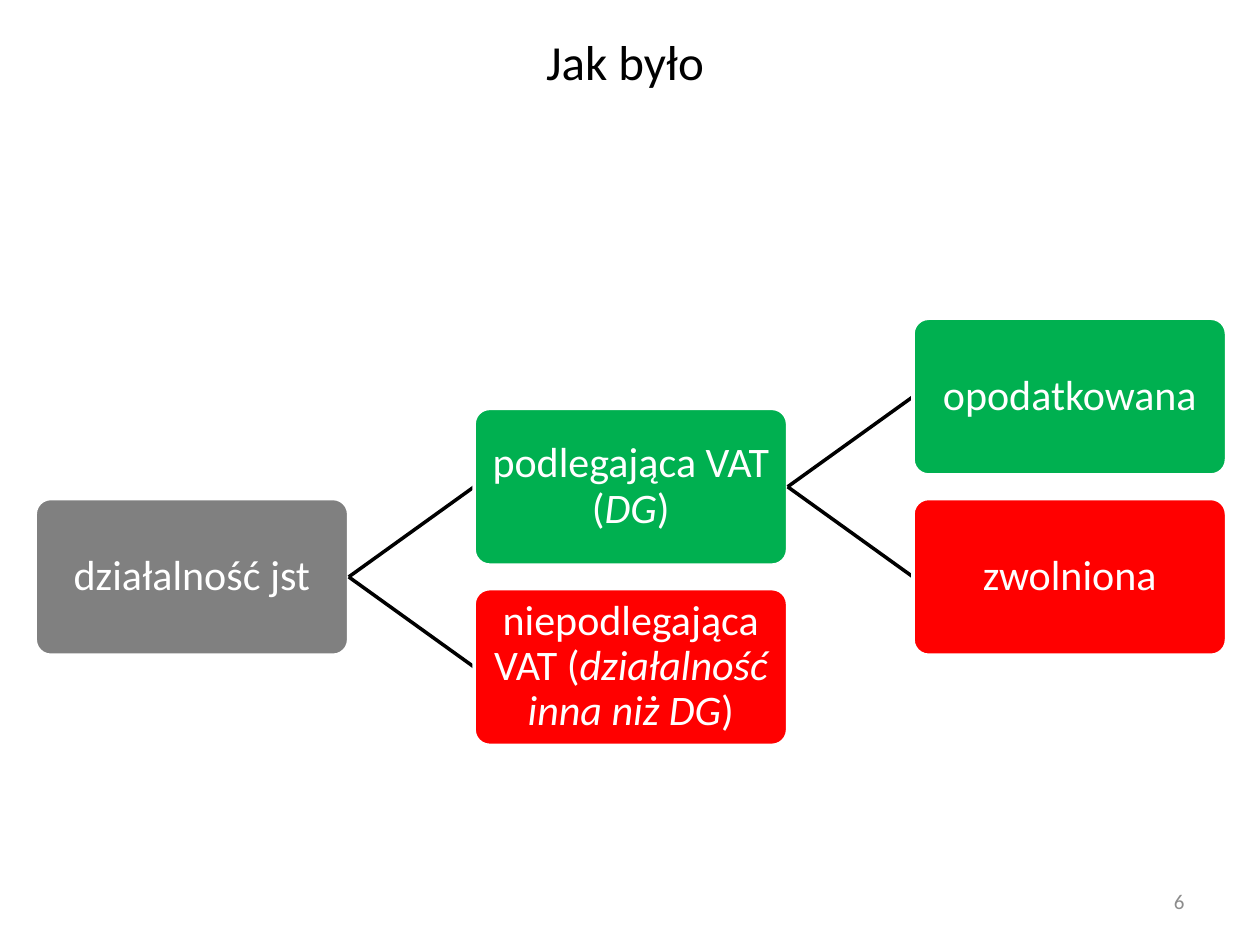
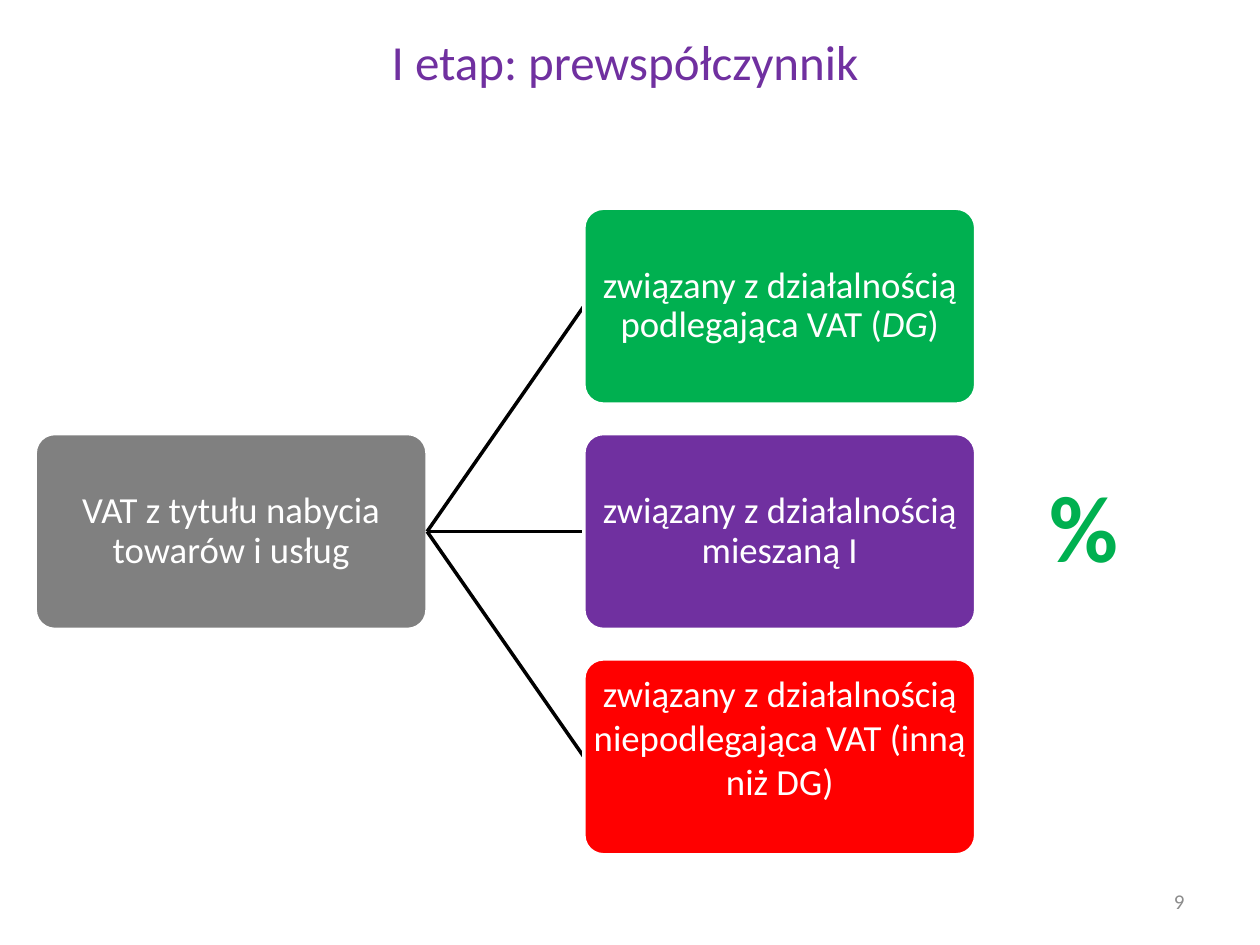
from dataclasses import dataclass
from pptx import Presentation
from pptx.dml.color import RGBColor as Rgb
from pptx.enum.shapes import MSO_CONNECTOR as Link, MSO_SHAPE as Form
from pptx.enum.text import MSO_ANCHOR as Anchor, PP_ALIGN as Align
from pptx.oxml.ns import qn
from pptx.util import Cm, Pt


@dataclass(frozen=True)
class Theme:
    font: str = "Calibri"
    black: str = "000000"
    white: str = "FFFFFF"
    gray: str = "808080"
    pale: str = "8C8C8C"
    green: str = "00B050"
    red: str = "FF0000"
    violet: str = "7030A0"
    title: int = 28
    number: int = 12
    sign: int = 54
    large: int = 24
    small: int = 21
    line: int = 2


@dataclass
class Box:
    left: float
    top: float
    width: float
    height: float

    def cm(self):
        return [Cm(v) for v in (self.left, self.top, self.width, self.height)]

    def move(self, cols, rows):
        return Box(self.left + cols * 1.4 * self.width,
                   self.top + rows * 1.15 * self.height,
                   self.width, self.height)


@dataclass
class Node:
    text: str
    color: str
    kids: tuple = ()
    space: float = 0.9
    foot: float = 0


T = Theme()
TITLE = Box(2.9, 0.33, 19.4, 1.8)
NUMBER = Box(18.21, 17.65, 5.92, 1.02)


def write(frame, text, size, color, align=Align.CENTER, bold=None):
    frame.word_wrap = True
    para = frame.paragraphs[0]
    para.alignment = align
    para.font.name, para.font.size, para.font.bold = T.font, Pt(size), bold
    para.font.color.rgb = Rgb.from_string(color)
    for i, part in enumerate(text.split("*")):
        run = para.add_run()
        run.text = part
        if i % 2:
            run.font.italic = True
    return para


def label(slide, box, text, size, color, align, anchor=Anchor.MIDDLE, bold=None):
    frame = slide.shapes.add_textbox(*box.cm()).text_frame
    frame.vertical_anchor = anchor
    write(frame, text, size, color, align, bold)


def card(slide, box, node, size, inset):
    shape = slide.shapes.add_shape(Form.ROUNDED_RECTANGLE, *box.cm())
    shape.adjustments[0] = 0.1
    shape.shadow.inherit = False
    shape.fill.solid()
    shape.fill.fore_color.rgb = Rgb.from_string(node.color)
    shape.line.color.rgb = Rgb.from_string(T.white)
    shape.line.width = Pt(T.line)
    frame = shape.text_frame
    frame.vertical_anchor = Anchor.MIDDLE
    frame.margin_left = frame.margin_right = frame.margin_top = Cm(inset)
    frame.margin_bottom = Cm(inset + node.foot)
    write(frame, node.text, size, T.white).line_spacing = node.space


def link(slide, start, end):
    line = slide.shapes.add_connector(
        Link.STRAIGHT,
        Cm(start.left + start.width), Cm(start.top + start.height / 2),
        Cm(end.left), Cm(end.top + end.height / 2))
    line.line.color.rgb = Rgb.from_string(T.black)
    line.line.width = Pt(T.line)
    props = line._element.spPr
    props.append(props.makeelement(qn("a:effectLst"), {}))


def tree(slide, box, node, size, inset):
    card(slide, box, node, size, inset)
    for i, kid in enumerate(node.kids):
        spot = box.move(1, i - (len(node.kids) - 1) / 2)
        link(slide, box, spot)
        tree(slide, spot, kid, size, inset)


def page(deck, title, color, number):
    slide = deck.slides.add_slide(deck.slide_layouts[6])
    label(slide, TITLE, title, T.title, color, Align.CENTER)
    label(slide, NUMBER, number, T.number, T.pale, Align.RIGHT)
    return slide


def past(deck):
    slide = page(deck, "Jak było", T.black, "6")
    root = Node("działalność jst", T.gray, (
        Node("podlegająca VAT (*DG*)", T.green, (
            Node("opodatkowana", T.green),
            Node("zwolniona", T.red))),
        Node("niepodlegająca VAT (*działalność inna niż DG*)", T.red)))
    tree(slide, Box(0.71, 10.05, 6.32, 3.16), root, T.large, 0.05)


def stage(deck):
    slide = page(deck, "I etap: prewspółczynnik", T.violet, "9")
    root = Node("VAT z tytułu nabycia towarów i usług", T.gray, (
        Node("związany z działalnością podlegająca VAT (*DG*)", T.green),
        Node("związany z działalnością mieszaną I", T.violet),
        Node("związany z działalnością niepodlegająca VAT (inną niż DG)",
             T.red, space=1.0, foot=0.81)))
    tree(slide, Box(0.71, 8.74, 7.9, 3.95), root, T.small, 0.03)
    label(slide, Box(20.9, 9.32, 2.95, 2.57), "%", T.sign, T.green,
          Align.LEFT, Anchor.TOP, True)


def main():
    deck = Presentation()
    deck.slide_width, deck.slide_height = Cm(25.4), Cm(19.05)
    past(deck)
    stage(deck)
    deck.save("out.pptx")


if __name__ == "__main__":
    main()
